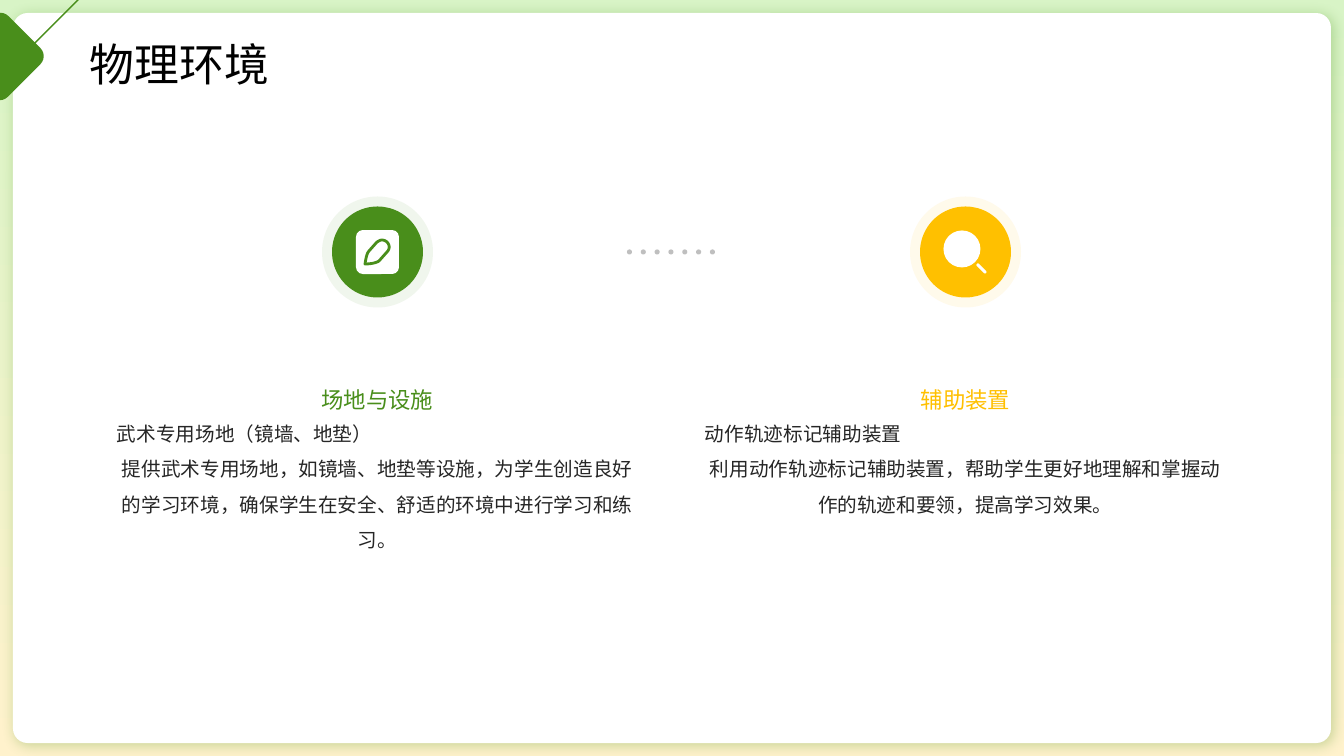
from math import cos, pi, sin

from lxml import etree
from pptx import Presentation
from pptx.dml.color import RGBColor
from pptx.enum.shapes import MSO_SHAPE
from pptx.enum.text import MSO_ANCHOR, PP_ALIGN
from pptx.oxml.ns import qn
from pptx.util import Pt

# Content
TITLE = "物理环境"
COLUMNS = [
    ("场地与设施", "green", "武术专用场地（镜墙、地垫）",
     "提供武术专用场地，如镜墙、地垫等设施，为学生创造良好的学习环境，确保学生在安全、舒适的环境中进行学习和练习。"),
    ("辅助装置", "amber", "动作轨迹标记辅助装置",
     "利用动作轨迹标记辅助装置，帮助学生更好地理解和掌握动作的轨迹和要领，提高学习效果。"),
]

COLORS = {
    "green": "498E1B", "amber": "FFC000", "white": "FFFFFF", "dot": "BFBFBF",
    "body": "262626", "title": "000000", "cream": "FFF2CC", "mint": "D8F4C6",
}
FONT = "Noto Sans CJK SC"

# Layout in px
PX = 914400 / 100.8
SLIDE_W, SLIDE_H = 1344, 756
COL_X, COL_W, COL_PITCH = 117, 521, 588
ICON_Y = 252
HALO, DISC = 111, 91
DOTS, DOT_SIZE, DOT_SPAN, DOT_MID = 7, 5, 83, 671

# Outlines: a pair is a straight step, three pairs are a curve
PEN = [(382, 240), ((384, 240), (386, 241), (387, 242)),
       ((390, 245), (390, 249), (387, 252)), (379, 261),
       ((376, 263), (370, 264), (365, 264)),
       ((366, 258), (367, 253), (369, 251)), (377, 242),
       ((379, 241), (380, 240), (382, 240))]
CORNER = [(6, 60), ((14, 60), (21, 57), (27, 51)), (83, -5), (-71, -5),
          (-14, 51), ((-9, 57), (-1, 60), (6, 60))]


def emu(px):
    return round(px * PX)


def rgb(name):
    return RGBColor.from_string(COLORS[name])


def add_shape(kind, x, y, w, h, color, adj=None, rotation=0):
    sp = slide.shapes.add_shape(kind, emu(x), emu(y), emu(w), emu(h))
    sp.shadow.inherit = False
    sp.fill.solid()
    sp.fill.fore_color.rgb = rgb(color)
    sp.line.fill.background()
    sp.rotation = rotation
    if adj is not None:
        sp.adjustments[0] = adj
    return sp


def add_circle(cx, cy, size, color):
    return add_shape(MSO_SHAPE.OVAL, cx - size / 2, cy - size / 2, size, size, color)


def flatten(steps):
    points = [steps[0]]
    for step in steps[1:]:
        if isinstance(step[0], tuple):
            p0, (p1, p2, p3) = points[-1], step
            for t in (i / 8 for i in range(1, 9)):
                u = 1 - t
                points.append(tuple(
                    u**3 * a + 3 * u * u * t * b + 3 * u * t * t * c + t**3 * d
                    for a, b, c, d in zip(p0, p1, p2, p3)))
        else:
            points.append(step)
    return points


def add_freeform(contours):
    contours = [[(emu(x), emu(y)) for x, y in points] for points in contours]
    builder = slide.shapes.build_freeform(*contours[0][0])
    for i, points in enumerate(contours):
        if i:
            builder.move_to(*points[0])
        builder.add_line_segments(points[1:], close=True)
    sp = builder.convert_to_shape()
    sp.shadow.inherit = False
    return sp


def add_outline(steps, color, weight):
    sp = add_freeform([flatten(steps)])
    sp.fill.background()
    sp.line.color.rgb = rgb(color)
    sp.line.width = Pt(weight)


def add_text(x, y, w, h, lines, size, color, anchor):
    tf = slide.shapes.add_textbox(emu(x), emu(y), emu(w), emu(h)).text_frame
    tf.word_wrap = True
    tf.vertical_anchor = anchor
    tf.margin_left = tf.margin_right = tf.margin_top = tf.margin_bottom = 0
    for i, (text, align, spacing) in enumerate(lines):
        p = tf.add_paragraph() if i else tf.paragraphs[0]
        p.text = text
        p.alignment = align
        p.line_spacing = spacing
        r = p.runs[0]
        r.font.size = Pt(size)
        r.font.name = FONT
        r.font.color.rgb = rgb(color)
        etree.SubElement(r.font._element, qn("a:ea"), typeface=FONT)


def add_card_shadow(sp):
    effects = sp._element.spPr.find(qn("a:effectLst"))
    shadow = etree.SubElement(effects, qn("a:outerShdw"), blurRad=str(Pt(10)),
                              dist=str(Pt(3)), dir="2700000", algn="tl", rotWithShape="0")
    clr = etree.SubElement(shadow, qn("a:srgbClr"), val=COLORS["green"])
    etree.SubElement(clr, qn("a:alpha"), val="30000")


prs = Presentation()
prs.slide_width, prs.slide_height = emu(SLIDE_W), emu(SLIDE_H)
slide = prs.slides.add_slide(prs.slide_layouts[6])

# Background and card
backdrop = add_shape(MSO_SHAPE.RECTANGLE, 0, 0, SLIDE_W, SLIDE_H, "mint")
backdrop.fill.gradient()
backdrop.fill.gradient_angle = 90
for stop, position, name in zip(backdrop.fill.gradient_stops, (0, 1), ("cream", "mint")):
    stop.position = position
    stop.color.rgb = rgb(name)
card = add_shape(MSO_SHAPE.ROUNDED_RECTANGLE, 13, 13, SLIDE_W - 26, SLIDE_H - 26,
                 "white", adj=0.02)
add_card_shadow(card)

# Dotted link between the icons
centres = [DOT_MID + DOT_SPAN * (i / (DOTS - 1) - 0.5) for i in range(DOTS)]
angles = [2 * pi * k / 24 for k in range(24)]
dots = add_freeform([[(cx + DOT_SIZE / 2 * cos(a), ICON_Y + DOT_SIZE / 2 * sin(a))
                      for a in angles] for cx in centres])
dots.fill.solid()
dots.fill.fore_color.rgb = rgb("dot")
dots.line.fill.background()

# Columns: badge, heading, description
for i, (heading, color, lead, detail) in enumerate(COLUMNS):
    x = COL_X + i * COL_PITCH
    cx = x + COL_W / 2
    halo = add_circle(cx, ICON_Y, HALO, color)
    clr = halo.fill._xPr.find(qn("a:solidFill"))[0]
    etree.SubElement(clr, qn("a:alpha"), val="8000")
    add_circle(cx, ICON_Y, DISC, color)
    add_text(x, 319, COL_W, 94, [(heading, PP_ALIGN.CENTER, 1.3)], 16, color,
             MSO_ANCHOR.BOTTOM)
    add_text(x, 422, COL_W, 192,
             [(lead, PP_ALIGN.LEFT, 1.0), (detail, PP_ALIGN.CENTER, 1.5)],
             14, "body", MSO_ANCHOR.TOP)

# Pen icon
add_shape(MSO_SHAPE.ROUNDED_RECTANGLE, 356, 230, 43, 44, "white", adj=0.16)
add_outline(PEN, "green", 2)

# Magnifier icon
add_circle(962, 249, 37, "white")
add_shape(MSO_SHAPE.ROUNDED_RECTANGLE, 975, 267, 13, 3, "white", adj=0.5, rotation=45)

# Corner ornament and title
add_outline(CORNER, "green", 1)
add_shape(MSO_SHAPE.ROUNDED_RECTANGLE, -34, 22, 68, 69, "green", rotation=45)
add_text(90, 27, 858, 47, [(TITLE, PP_ALIGN.LEFT, 1.5)], 32, "title", MSO_ANCHOR.MIDDLE)

prs.save("out.pptx")
